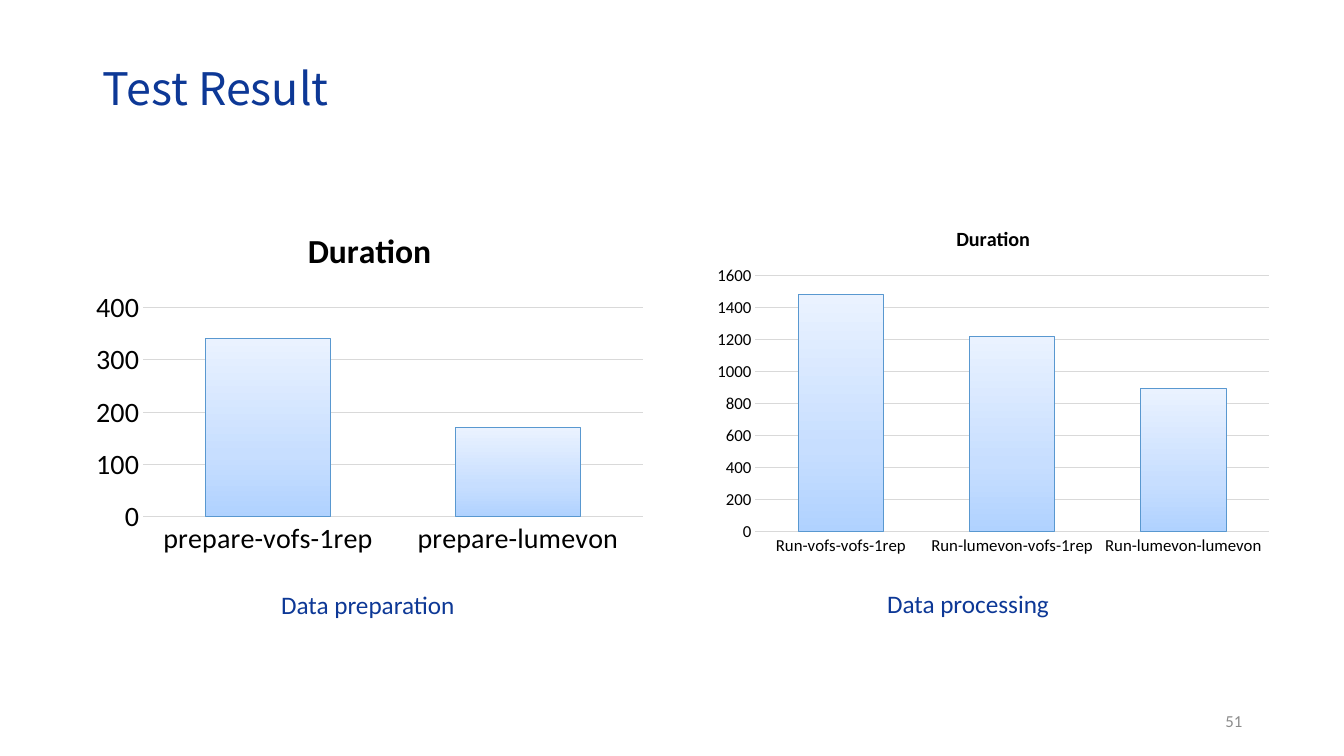
import copy

import pptx
import pptx.chart.data
import pptx.dml.color
import pptx.enum.chart
import pptx.enum.text
import pptx.oxml
import pptx.util

# Content
TITLE = "Test Result"
PAGE = "51"
SERIES = "Duration"
CHARTS = [
    dict(values={"prepare-vofs-1rep": 340, "prepare-lumevon": 170},
         left=0.84, width=5.65, size=20, top_value=400, step=100),
    dict(values={"Run-vofs-vofs-1rep": 1480, "Run-lumevon-vofs-1rep": 1220,
                 "Run-lumevon-lumevon": 890},
         left=7, width=5.7, size=12, top_value=1600, step=200),
]
CAPTIONS = [("Data preparation", (2.69, 5.8, 1.94, 0.4), False),
            ("Data processing", (8.7, 5.79, 1.93, 0.4), True)]

# Style
COLORS = {"blue": "0D3896", "text": "000000", "page": "8C8C8C",
          "grid": "D9D9D9", "bar_line": "5998D0"}
BAR_STOPS = [(0, "B0D2FF"), (0.35, "C7DEFF"), (1, "EAF2FF")]
CHART_TOP, CHART_HEIGHT = 2.08, 3.5
FONT = "Calibri"
ALIGN = pptx.enum.text.PP_ALIGN
ANCHOR = pptx.enum.text.MSO_ANCHOR


def rgb(value):
    return pptx.dml.color.RGBColor.from_string(value)


def place(shape, box):
    shape.left, shape.top, shape.width, shape.height = map(pptx.util.Inches, box)


def style_font(font, size, color, name=FONT, bold=False):
    font.size, font.name, font.bold = pptx.util.Pt(size), name, bold
    font.color.rgb = rgb(color)


def write(tf, text, size=18, color=COLORS["blue"], name=FONT, align=ALIGN.LEFT,
          anchor=ANCHOR.TOP, wrap=True, spacing=None):
    tf.word_wrap, tf.vertical_anchor = wrap, anchor
    p = tf.paragraphs[0]
    p.alignment, p.line_spacing = align, spacing
    r = p.add_run()
    r.text = text
    style_font(r.font, size, color, name)


def style_line(line, color):
    line.color.rgb = rgb(color)
    line.width = pptx.util.Pt(0.75)


def fill_bars(series):
    fill = series.format.fill
    fill.gradient()
    fill.gradient_angle = 90
    first = series._element.xpath(".//a:gs")[0]
    first.addnext(copy.deepcopy(first))
    for stop, (position, color) in zip(fill.gradient_stops, BAR_STOPS):
        stop.position = position
        stop.color.rgb = rgb(color)
    style_line(series.format.line, COLORS["bar_line"])


def add_duration_chart(s, values, left, width, size, top_value, step):
    data = pptx.chart.data.CategoryChartData()
    data.categories = list(values)
    data.add_series(SERIES, list(values.values()))
    box = map(pptx.util.Inches, (left, CHART_TOP, width, CHART_HEIGHT))
    chart = s.shapes.add_chart(
        pptx.enum.chart.XL_CHART_TYPE.COLUMN_CLUSTERED, *box, data).chart
    style_font(chart.font, size, COLORS["text"])
    chart.has_legend = False

    # Chart title, a fifth larger than the axis labels
    chart.has_title = True
    r = chart.chart_title.text_frame.paragraphs[0].add_run()
    r.text = SERIES
    style_font(r.font, size * 1.2, COLORS["text"], bold=True)
    chart.chart_title.include_in_layout = False

    # Axes
    category, value = chart.category_axis, chart.value_axis
    for axis in (category, value):
        axis.major_tick_mark = pptx.enum.chart.XL_TICK_MARK.NONE
        axis.minor_tick_mark = pptx.enum.chart.XL_TICK_MARK.NONE
    style_line(category.format.line, COLORS["grid"])
    value.format.line.fill.background()
    value.has_major_gridlines = True
    style_line(value.major_gridlines.format.line, COLORS["grid"])
    value.minimum_scale, value.maximum_scale = 0, top_value
    value.major_unit = step

    # Bars
    plot = chart.plots[0]
    plot.gap_width, plot.overlap, plot.vary_by_categories = 100, -24, False
    fill_bars(plot.series[0])


def main():
    prs = pptx.Presentation()
    prs.slide_width = pptx.util.Inches(13.33)
    prs.slide_height = pptx.util.Inches(7.5)
    s = prs.slides.add_slide(prs.slide_layouts[5])

    # Title
    place(s.shapes.title, (0.92, 0.4, 11.5, 1.01))
    write(s.shapes.title.text_frame, TITLE, size=32, name="Noto Sans CJK SC",
          anchor=ANCHOR.MIDDLE, spacing=0.9)

    # Charts and their captions
    for chart in CHARTS:
        add_duration_chart(s, **chart)
    for text, box, wrap in CAPTIONS:
        tb = s.shapes.add_textbox(*map(pptx.util.Inches, box))
        write(tb.text_frame, text, wrap=wrap)

    # Page number
    tb = s.shapes.add_textbox(*map(pptx.util.Inches, (9.42, 6.95, 3, 0.4)))
    write(tb.text_frame, PAGE, size=12, color=COLORS["page"],
          align=ALIGN.RIGHT, anchor=ANCHOR.MIDDLE)

    prs.save("out.pptx")


if __name__ == "__main__":
    main()
